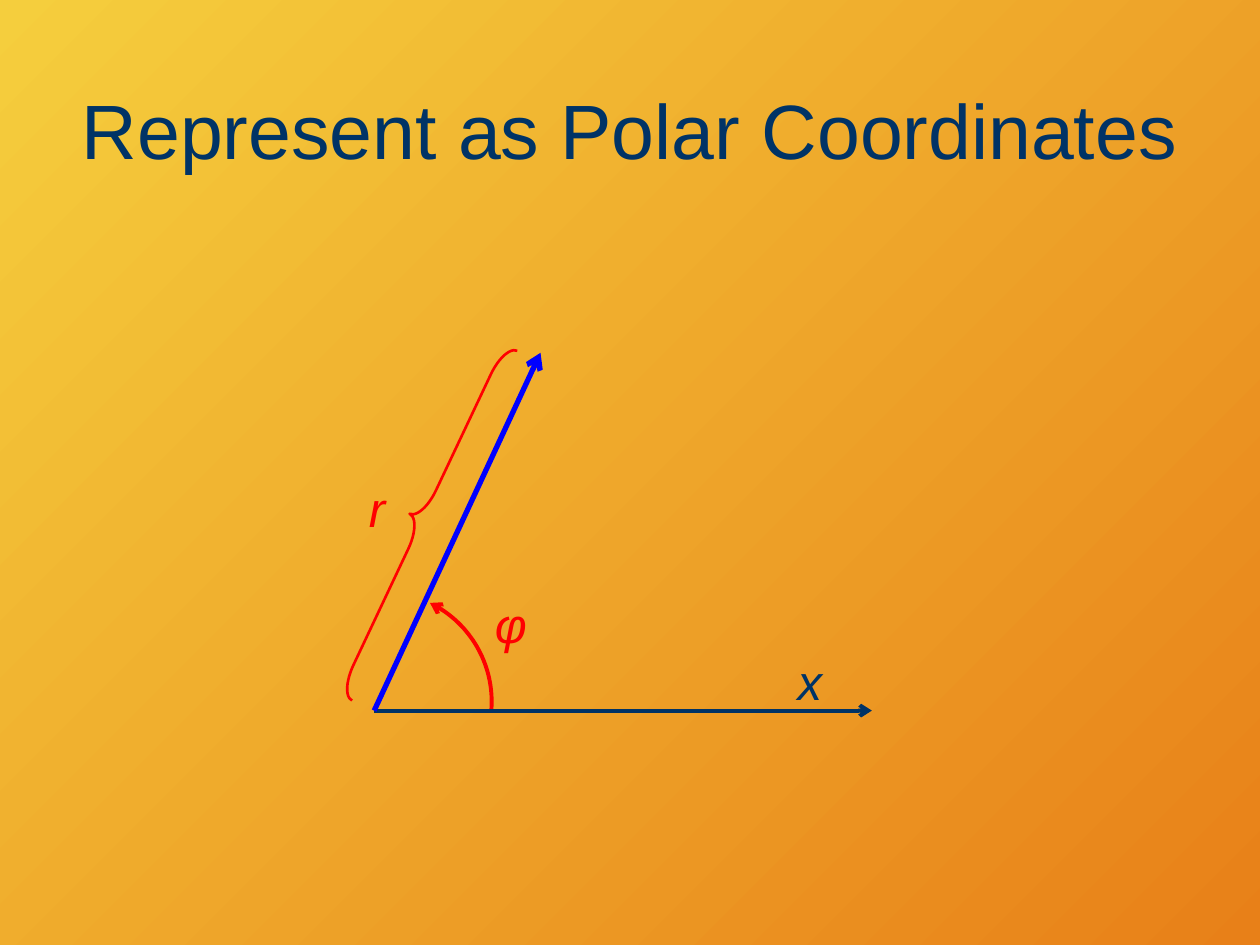
"""Builds a slide that shows a vector in polar coordinates."""
from math import cos, radians, sin

from lxml.etree import SubElement
from pptx import Presentation
from pptx.dml.color import RGBColor
from pptx.enum.shapes import MSO_CONNECTOR, MSO_SHAPE
from pptx.enum.text import MSO_ANCHOR, MSO_AUTO_SIZE, PP_ALIGN
from pptx.oxml.ns import qn
from pptx.util import Pt

COLORS = {"navy": "003366", "red": "FF0000", "blue": "0000FF",
          "yellow": "F5CE3D", "orange": "E88018"}


def style_text(frame, text, size, color, italic):
    frame.text = text
    font = frame.paragraphs[0].runs[0].font
    for name, value in {"name": "Arial", "size": Pt(size), "italic": italic}.items():
        setattr(font, name, value)
    font.color.rgb = RGBColor.from_string(COLORS[color])


def style_line(stroke, color, width, arrow=True):
    stroke.line.color.rgb = RGBColor.from_string(COLORS[color])
    stroke.line.width = Pt(width)
    if arrow:
        SubElement(stroke.line._get_or_add_ln(), qn("a:tailEnd"), type="arrow")


prs = Presentation()
prs.slide_width, prs.slide_height = Pt(720), Pt(540)
slide = prs.slides.add_slide(prs.slide_layouts[5])
shapes = slide.shapes

backdrop = slide.background.fill
backdrop.gradient()
backdrop.gradient_angle = 315
for stop, color, position in zip(backdrop.gradient_stops, ("yellow", "orange"), (0, 1)):
    stop.color.rgb = RGBColor.from_string(COLORS[color])
    stop.position = position

title = shapes.title
title.left, title.top, title.width, title.height = Pt(36), Pt(21.6), Pt(648), Pt(104.4)
style_text(title.text_frame, "Represent as Polar Coordinates", 44, "navy", False)
title.text_frame.vertical_anchor = MSO_ANCHOR.MIDDLE
title.text_frame.paragraphs[0].alignment = PP_ALIGN.CENTER

center_x, center_y, radius = 218.2, 401, 62.8
arc_points = [(Pt(center_x + radius * cos(radians(angle))),
               Pt(center_y - radius * sin(radians(angle))))
              for angle in range(-4, 65, 2)]
arc_builder = shapes.build_freeform(*arc_points[0])
arc_builder.add_line_segments(arc_points[1:], close=False)
angle_arc = arc_builder.convert_to_shape()
style_line(angle_arc, "red", 2.25)

origin = Pt(213.84), Pt(406.08)
for tip_x, tip_y, color, width in ((498.24, 406.08, "navy", 2.25),
                                   (308.88, 201.6, "blue", 3)):
    arrow = shapes.add_connector(MSO_CONNECTOR.STRAIGHT, *origin, Pt(tip_x), Pt(tip_y))
    style_line(arrow, color, width)
    SubElement(arrow._element.spPr, qn("a:effectLst"))

radius_brace = shapes.add_shape(MSO_SHAPE.LEFT_BRACE, Pt(233.28), Pt(186.48),
                                Pt(15.84), Pt(221.04))
radius_brace.rotation = 25.3
radius_brace.adjustments[0] = 1.168
style_line(radius_brace, "red", 1.5, arrow=False)

for outline in (angle_arc, radius_brace):
    outline.fill.background()
    outline.shadow.inherit = False

for text, left, top, width, height, color, inset, wrap in (
        ("x", 455.76, 372.24, 24.48, 33.84, "navy", (0, 0), True),
        ("φ", 275.76, 336.24, 28.8, 41.04, "red", (7.2, 3.6), True),
        ("r", 203.76, 270, 23.76, 41.04, "red", (7.2, 3.6), False)):
    frame = shapes.add_textbox(Pt(left), Pt(top), Pt(width), Pt(height)).text_frame
    style_text(frame, text, 28, color, True)
    side, edge = (Pt(length) for length in inset)
    for name, value in {"margin_left": side, "margin_right": side,
                        "margin_top": edge, "margin_bottom": edge, "word_wrap": wrap,
                        "auto_size": MSO_AUTO_SIZE.SHAPE_TO_FIT_TEXT}.items():
        setattr(frame, name, value)

prs.save("out.pptx")
